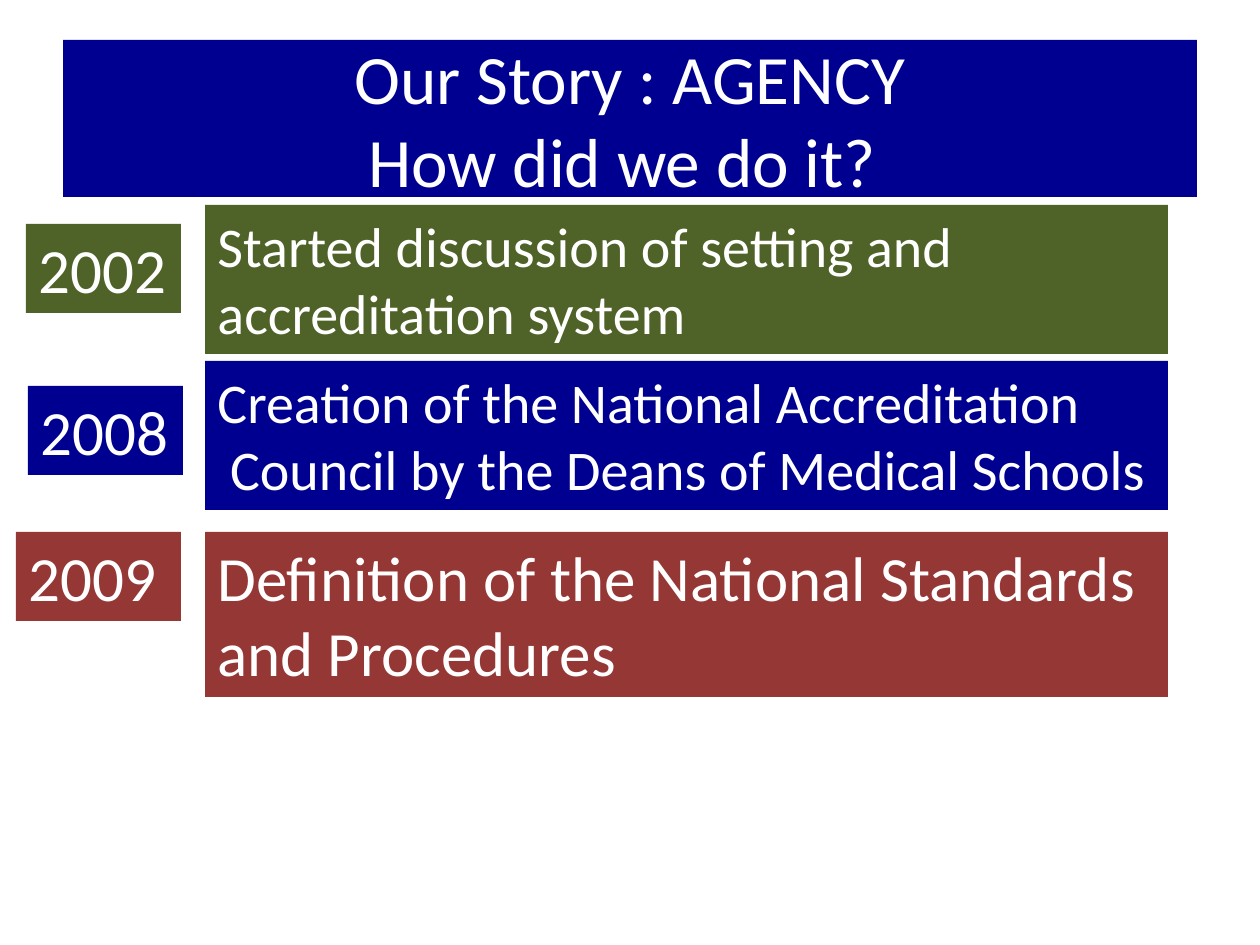
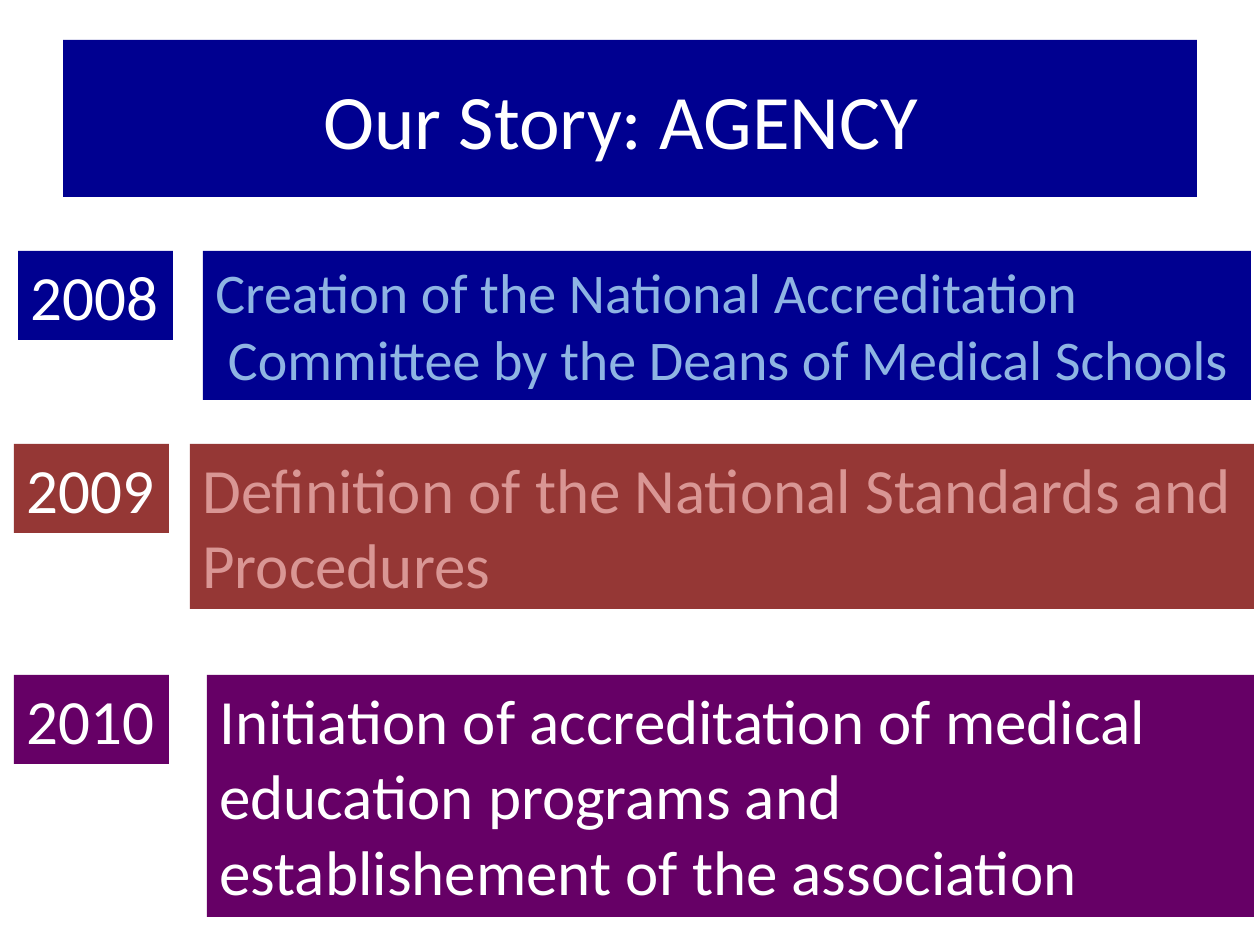
from collections import namedtuple

from pptx import Presentation
from pptx import util as u
from pptx.dml.color import RGBColor
from pptx.enum import text

NAVY = RGBColor(0x00, 0x00, 0x90)
OLIVE = RGBColor(0x4F, 0x62, 0x28)
BRICK = RGBColor(0x95, 0x37, 0x35)
PURPLE = RGBColor(0x66, 0x00, 0x66)
WHITE = RGBColor(0xFF, 0xFF, 0xFF)
PALE_BLUE = RGBColor(0x8E, 0xB4, 0xE3)
PALE_RED = RGBColor(0xD9, 0x96, 0x94)

FONT = "Calibri"
PX_PER_INCH = 126
TITLE_ONLY = 5
TITLE_BOX = (63, 40, 1134, 157)
YEAR_HEIGHT = 89
YEAR_SIZE = 36

Milestone = namedtuple(
    "Milestone", "year event box band ink size year_dx year_dy year_width",
    defaults=(WHITE, 36, -185, 0, 155))


def px(length):
    """Turn pixels into EMU."""
    return u.Inches(length / PX_PER_INCH)


def paint(panel, band, ink, size):
    """Fill a panel and format all its text."""
    panel.fill.solid()
    panel.fill.fore_color.rgb = band
    for paragraph in panel.text_frame.paragraphs:
        for run in paragraph.runs:
            run.font.name = FONT
            run.font.size = u.Pt(size)
            run.font.color.rgb = ink


def add_panel(slide, box, words, band, ink, size):
    """Add a coloured text panel that grows with its text."""
    panel = slide.shapes.add_textbox(*map(px, box))
    frame = panel.text_frame
    frame.word_wrap = True
    frame.auto_size = text.MSO_AUTO_SIZE.SHAPE_TO_FIT_TEXT
    frame.text = words
    paint(panel, band, ink, size)


def add_title(slide, words, size):
    """Format the title placeholder as a navy band."""
    title = slide.shapes.title
    title.left, title.top, title.width, title.height = map(px, TITLE_BOX)
    frame = title.text_frame
    frame.text = words
    frame.auto_size = text.MSO_AUTO_SIZE.NONE
    frame.vertical_anchor = text.MSO_ANCHOR.MIDDLE
    frame.paragraphs[0].alignment = text.PP_ALIGN.CENTER
    paint(title, NAVY, WHITE, size)


def add_milestone(slide, step):
    """Place an event panel and its year beside it."""
    left, top = step.box[:2]
    year_box = (left + step.year_dx, top + step.year_dy,
                step.year_width, YEAR_HEIGHT)
    add_panel(slide, year_box, step.year, step.band, WHITE, YEAR_SIZE)
    add_panel(slide, step.box, step.event, step.band, step.ink, step.size)


def add_story(deck, title, title_size, milestones):
    """Add one timeline slide."""
    slide = deck.slides.add_slide(deck.slide_layouts[TITLE_ONLY])
    add_title(slide, title, title_size)
    for step in milestones:
        add_milestone(slide, step)


def main():
    """Build and save both slides."""
    deck = Presentation()
    deck.slide_width, deck.slide_height = u.Inches(10), u.Inches(7.5)

    creation = "Creation of the National Accreditation\n {} by the Deans of Medical Schools"
    standards = "Definition of the National Standards and Procedures"

    add_story(deck, "Our Story : AGENCY\vHow did we do it? ", 39.6, [
        Milestone("2002", "Started discussion of setting and\naccreditation system",
                  (205, 205, 963, 149), OLIVE, size=32, year_dx=-179, year_dy=19),
        Milestone("2008", creation.format("Council"),
                  (205, 361, 963, 149), NAVY, size=32, year_dx=-177, year_dy=25),
        Milestone("2009", standards, (205, 532, 963, 165), BRICK,
                  year_dx=-189, year_width=165),
    ])
    add_story(deck, "Our Story: AGENCY ", 44, [
        Milestone("2008", creation.format("Committee"),
                  (203, 251, 1048, 149), NAVY, PALE_BLUE, 32),
        Milestone("2009", standards, (190, 444, 1064, 165), BRICK, PALE_RED,
                  year_dx=-176),
        Milestone("2010", "Initiation of accreditation of medical education programs "
                  "and establishement of the association",
                  (207, 675, 1047, 242), PURPLE, year_dx=-193),
    ])
    deck.save("out.pptx")


if __name__ == "__main__":
    main()
